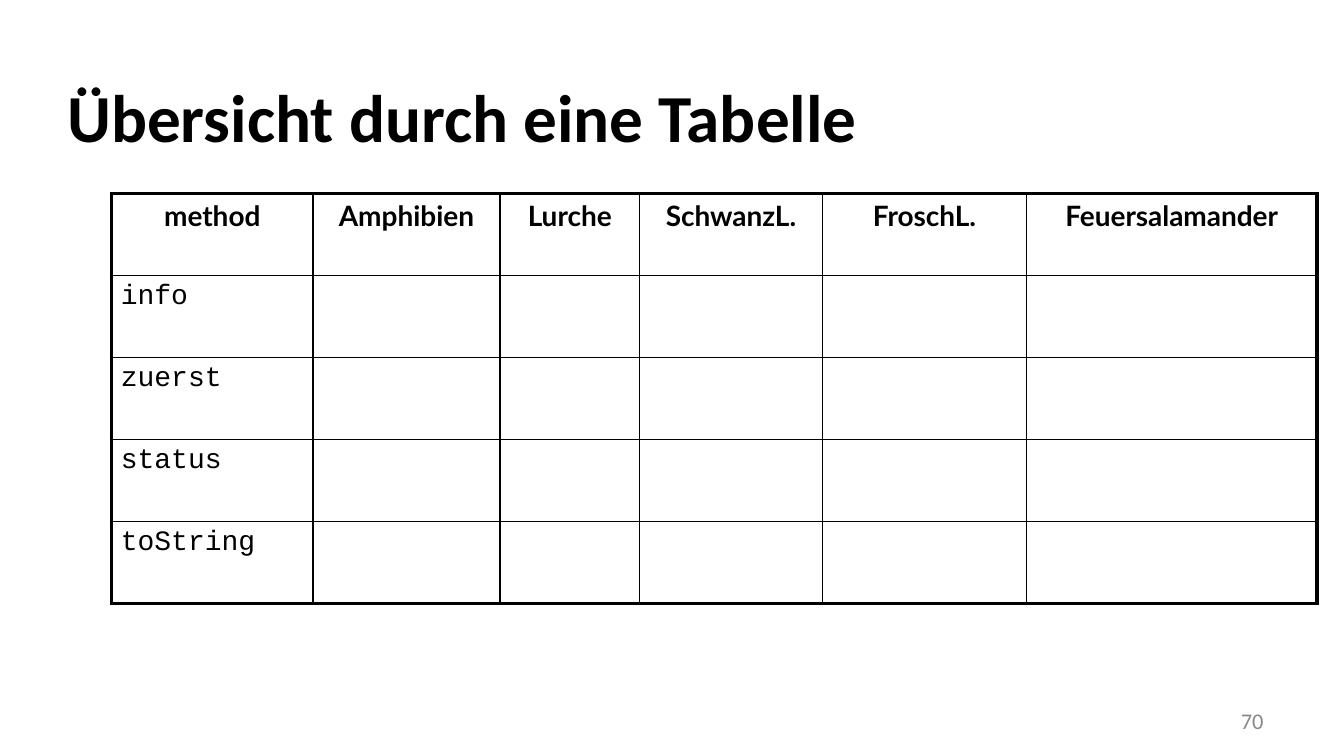
from lxml import etree
from pptx import Presentation
from pptx import util as u
from pptx.dml import color
from pptx.enum import text
from pptx.oxml import ns

COLUMN_WIDTHS = [1.5, 1.39, 1.04, 1.36, 1.52, 2.16]
ROW_HEIGHT = 0.61
HEADERS = ["method", "Amphibien", "Lurche", "SchwanzL.", "FroschL.", "Feuersalamander"]
METHODS = ["info", "zuerst", "status", "toString"]


def rgb(value):
    return color.RGBColor.from_string(value)


class SlideBuilder:
    ink = "000000"
    muted = "888888"
    heading_font = "Calibri"
    header_font = "Lato"
    code_font = "Courier New"
    outer_line = 2.25
    inner_line = 1

    def __init__(self, presentation):
        self.slide = presentation.slides.add_slide(presentation.slide_layouts[5])

    def format(self, frame, font, size, value, bold=False, align=text.PP_ALIGN.LEFT):
        for paragraph in frame.paragraphs:
            paragraph.alignment = align
            for run in paragraph.runs:
                run.font.name = font
                run.font.size = u.Pt(size)
                run.font.bold = bold
                run.font.color.rgb = rgb(value)

    def place(self, shape, left, top, width, height):
        shape.left, shape.top = u.Inches(left), u.Inches(top)
        shape.width, shape.height = u.Inches(width), u.Inches(height)

    def title(self, words, *box):
        shape = self.slide.shapes.title
        self.place(shape, *box)
        frame = shape.text_frame
        frame.text = words
        frame.word_wrap = True
        frame.auto_size = text.MSO_AUTO_SIZE.NONE
        frame.vertical_anchor = text.MSO_ANCHOR.BOTTOM
        frame.margin_left = frame.margin_right = frame.margin_bottom = 0
        frame.margin_top = u.Inches(0.05)
        self.format(frame, self.heading_font, 36, self.ink, bold=True)

    def page_number(self, number, *box):
        shape = self.slide.shapes.add_textbox(*map(u.Inches, box))
        frame = shape.text_frame
        frame.text = number
        frame.word_wrap = True
        frame.vertical_anchor = text.MSO_ANCHOR.MIDDLE
        self.format(frame, self.heading_font, 12, self.muted, align=text.PP_ALIGN.RIGHT)

    def border(self, cell, side, points):
        properties = cell._tc.get_or_add_tcPr()
        line = etree.SubElement(properties, ns.qn(f"a:ln{side}"), w=str(u.Pt(points)))
        fill = etree.SubElement(line, ns.qn("a:solidFill"))
        etree.SubElement(fill, ns.qn("a:srgbClr"), val=self.ink)

    def table(self, left, top, headers, methods, widths, row_height):
        row_count, column_count = len(methods) + 1, len(headers)
        frame = self.slide.shapes.add_table(
            row_count, column_count, u.Inches(left), u.Inches(top),
            u.Inches(sum(widths)), u.Inches(row_height * row_count))
        table = frame.table
        table.first_row = table.horz_banding = False
        for column, width in zip(table.columns, widths):
            column.width = u.Inches(width)
        for row in table.rows:
            row.height = u.Inches(row_height)
        for row in range(row_count):
            for column in range(column_count):
                cell = table.cell(row, column)
                cell.margin_left = cell.margin_right = u.Inches(0.07)
                cell.margin_top = cell.margin_bottom = u.Inches(0.04)
                outer_sides = {
                    "L": column == 0, "R": column == column_count - 1,
                    "T": row == 0, "B": row == row_count - 1}
                for side, outer in outer_sides.items():
                    self.border(cell, side, self.outer_line if outer else self.inner_line)
                cell.fill.background()
        for column, header in enumerate(headers):
            cell = table.cell(0, column)
            cell.text_frame.text = header
            self.format(cell.text_frame, self.header_font, 15, self.ink,
                        bold=True, align=text.PP_ALIGN.CENTER)
        for row, method in enumerate(methods, start=1):
            cell = table.cell(row, 0)
            cell.text_frame.text = method
            self.format(cell.text_frame, self.code_font, 15, self.ink)


def main():
    presentation = Presentation()
    presentation.slide_width = u.Inches(10)
    presentation.slide_height = presentation.slide_width * 9 // 16
    builder = SlideBuilder(presentation)
    builder.title("Übersicht durch eine Tabelle", 0.5, 0.22, 9, 0.94)
    builder.table(0.83, 1.44, HEADERS, METHODS, COLUMN_WIDTHS, ROW_HEIGHT)
    builder.page_number("70", 7.17, 5.21, 2.33, 0.3)
    presentation.save("out.pptx")


if __name__ == "__main__":
    main()
